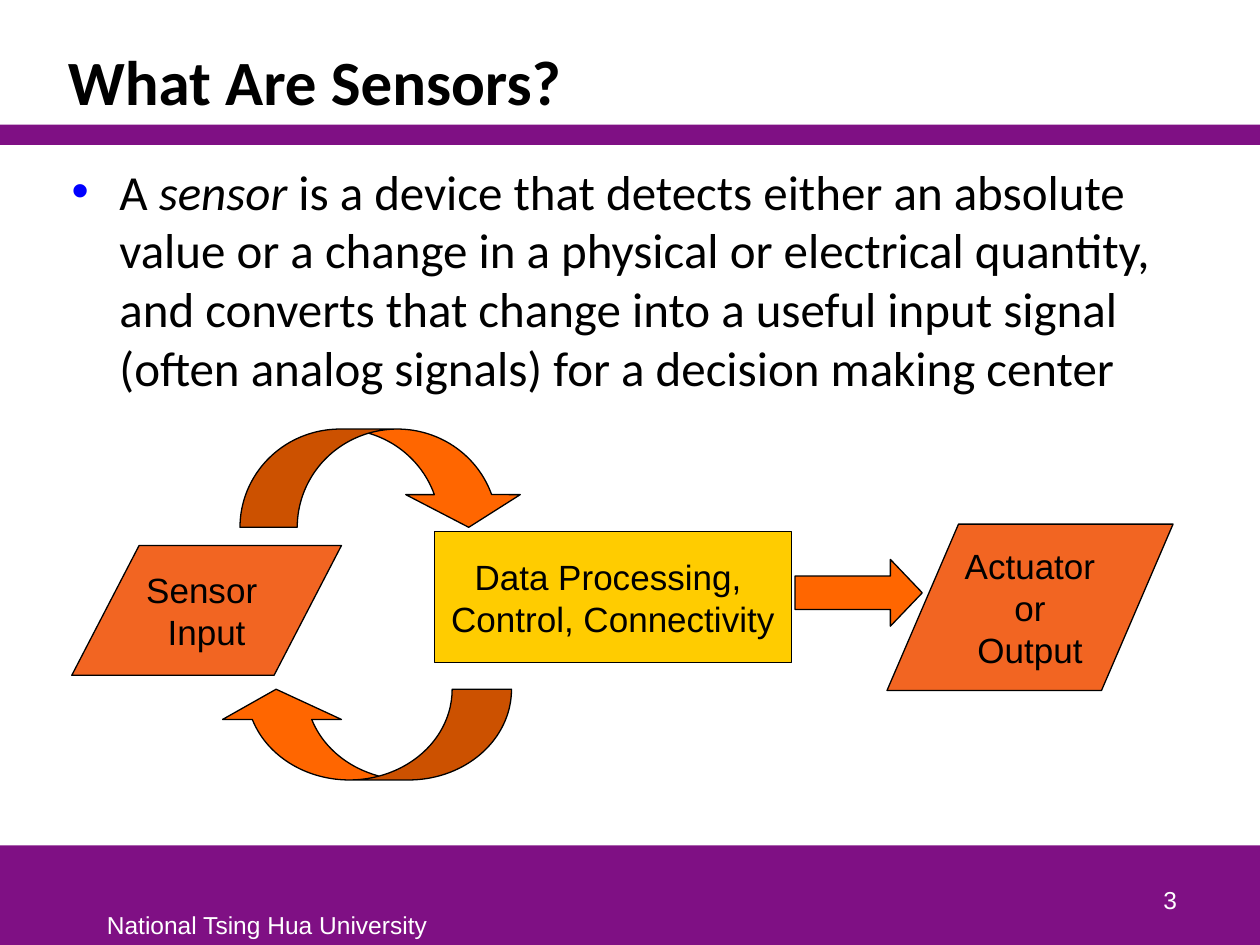
"""Build the "What Are Sensors?" slide with its sensor feedback loop diagram."""
from dataclasses import dataclass

from lxml import etree
from pptx import Presentation
from pptx.dml.color import RGBColor
from pptx.enum.shapes import MSO_SHAPE
from pptx.enum.text import MSO_ANCHOR, PP_ALIGN
from pptx.oxml.ns import qn
from pptx.util import Inches, Pt

RECTANGLE = MSO_SHAPE.RECTANGLE
PARALLELOGRAM = MSO_SHAPE.PARALLELOGRAM
CURVED_ARROW = MSO_SHAPE.CURVED_LEFT_ARROW
RIGHT_ARROW = MSO_SHAPE.RIGHT_ARROW
TOP, MIDDLE, BOTTOM = MSO_ANCHOR.TOP, MSO_ANCHOR.MIDDLE, MSO_ANCHOR.BOTTOM
LEFT, CENTER, RIGHT = PP_ALIGN.LEFT, PP_ALIGN.CENTER, PP_ALIGN.RIGHT


@dataclass(frozen=True)
class Theme:
    """Colours, fonts and type sizes of the slide."""
    purple: str = "7F1084"
    yellow: str = "FFCC00"
    coral: str = "F26522"
    orange: str = "FF6600"
    blue: str = "0000FF"
    black: str = "000000"
    white: str = "FFFFFF"
    heading_font: str = "Calibri"
    label_font: str = "Arial"
    title_size: int = 36
    body_size: int = 28
    label_size: int = 20
    footer_size: int = 14


THEME = Theme()

TITLE = "What Are Sensors?"
DEFINITION = [
    ("A ", False),
    ("sensor", True),
    (" is a device that detects either an absolute value or a change in a physical "
     "or electrical quantity, and converts that change into a useful input signal "
     "(often analog signals) for a decision making center", False),
]
FOOTER = "National Tsing Hua University"
SLIDE_NUMBER = "3"

BANDS = [(0, 6.71, 10, 0.79), (0, 0.99, 10, 0.16)]
BLOCKS = [
    (RECTANGLE, (3.45, 4.22, 2.83, 1.04), THEME.yellow, [],
     ["Data Processing, ", "Control, Connectivity"]),
    (PARALLELOGRAM, (0.57, 4.33, 2.14, 1.03), THEME.coral, [0.519], ["Sensor ", "Input"]),
    (PARALLELOGRAM, (7.04, 4.16, 2.27, 1.32), THEME.coral, [0.43],
     ["Actuator", "or", "Output"]),
]
ARROWS = [
    (CURVED_ARROW, (2.53, 4.66, 0.72, 2.34), 90, [0.655, 1.31, 0.333]),
    (CURVED_ARROW, (2.65, 2.66, 0.78, 2.27), 270, [0.583, 1.166, 0.333]),
    (RIGHT_ARROW, (6.31, 4.44, 1.01, 0.53), 0, [0.5, 0.477]),
]


def style_font(paragraph, name, size, color, bold=False):
    paragraph.font.name = name
    paragraph.font.size = Pt(size)
    paragraph.font.bold = bold
    paragraph.font.color.rgb = RGBColor.from_string(color)


def add_text(slide, box, anchor=TOP, alignment=LEFT, wrap=True):
    frame = slide.shapes.add_textbox(*map(Inches, box)).text_frame
    frame.word_wrap = wrap
    frame.vertical_anchor = anchor
    paragraph = frame.paragraphs[0]
    paragraph.alignment = alignment
    return paragraph


def add_filled_shape(slide, kind, box, fill, adjustments=(), outlined=True):
    shape = slide.shapes.add_shape(kind, *map(Inches, box))
    shape.shadow.inherit = False
    shape.fill.solid()
    shape.fill.fore_color.rgb = RGBColor.from_string(fill)
    if outlined:
        shape.line.color.rgb = RGBColor.from_string(THEME.black)
        shape.line.width = Pt(0.75)
    else:
        shape.line.fill.background()
    for index, value in enumerate(adjustments):
        shape.adjustments[index] = value
    return shape


def add_bullet(paragraph, indent, color):
    properties = paragraph._p.get_or_add_pPr()
    properties.set("marL", str(Inches(indent)))
    properties.set("indent", str(-Inches(indent)))
    bullet_color = etree.SubElement(properties, qn("a:buClr"))
    etree.SubElement(bullet_color, qn("a:srgbClr"), val=color)
    etree.SubElement(properties, qn("a:buFont"), typeface=THEME.label_font)
    etree.SubElement(properties, qn("a:buChar"), char="•")


def add_page_text(slide):
    title = add_text(slide, (0.44, 0.25, 8.97, 0.74), BOTTOM)
    title.text = TITLE
    title.line_spacing = 0.85
    style_font(title, THEME.heading_font, THEME.title_size, THEME.black, bold=True)

    definition = add_text(slide, (0.47, 1.23, 8.94, 5.43))
    add_bullet(definition, 0.38, THEME.blue)
    style_font(definition, THEME.heading_font, THEME.body_size, THEME.black)
    for text, italic in DEFINITION:
        run = definition.add_run()
        run.text = text
        run.font.italic = italic

    footer = add_text(slide, (0.75, 7.17, 2.76, 0.33), wrap=False)
    number = add_text(slide, (7.36, 6.81, 2.08, 0.5), BOTTOM, RIGHT)
    for paragraph, text in ((footer, FOOTER), (number, SLIDE_NUMBER)):
        paragraph.text = text
        style_font(paragraph, THEME.label_font, THEME.footer_size, THEME.white)


def add_diagram(slide):
    for kind, box, fill, adjustments, lines in BLOCKS:
        frame = add_filled_shape(slide, kind, box, fill, adjustments).text_frame
        frame.word_wrap = False
        frame.vertical_anchor = MIDDLE
        frame.text = "\n".join(lines)
        for paragraph in frame.paragraphs:
            paragraph.alignment = CENTER
            style_font(paragraph, THEME.label_font, THEME.label_size, THEME.black)
    for kind, box, rotation, adjustments in ARROWS:
        arrow = add_filled_shape(slide, kind, box, THEME.orange, adjustments)
        arrow.rotation = rotation


def main():
    presentation = Presentation()
    presentation.slide_width = Inches(10)
    presentation.slide_height = Inches(7.5)
    slide = presentation.slides.add_slide(presentation.slide_layouts[6])
    for box in BANDS:
        add_filled_shape(slide, RECTANGLE, box, THEME.purple, outlined=False)
    add_page_text(slide)
    add_diagram(slide)
    presentation.save("out.pptx")


if __name__ == "__main__":
    main()
